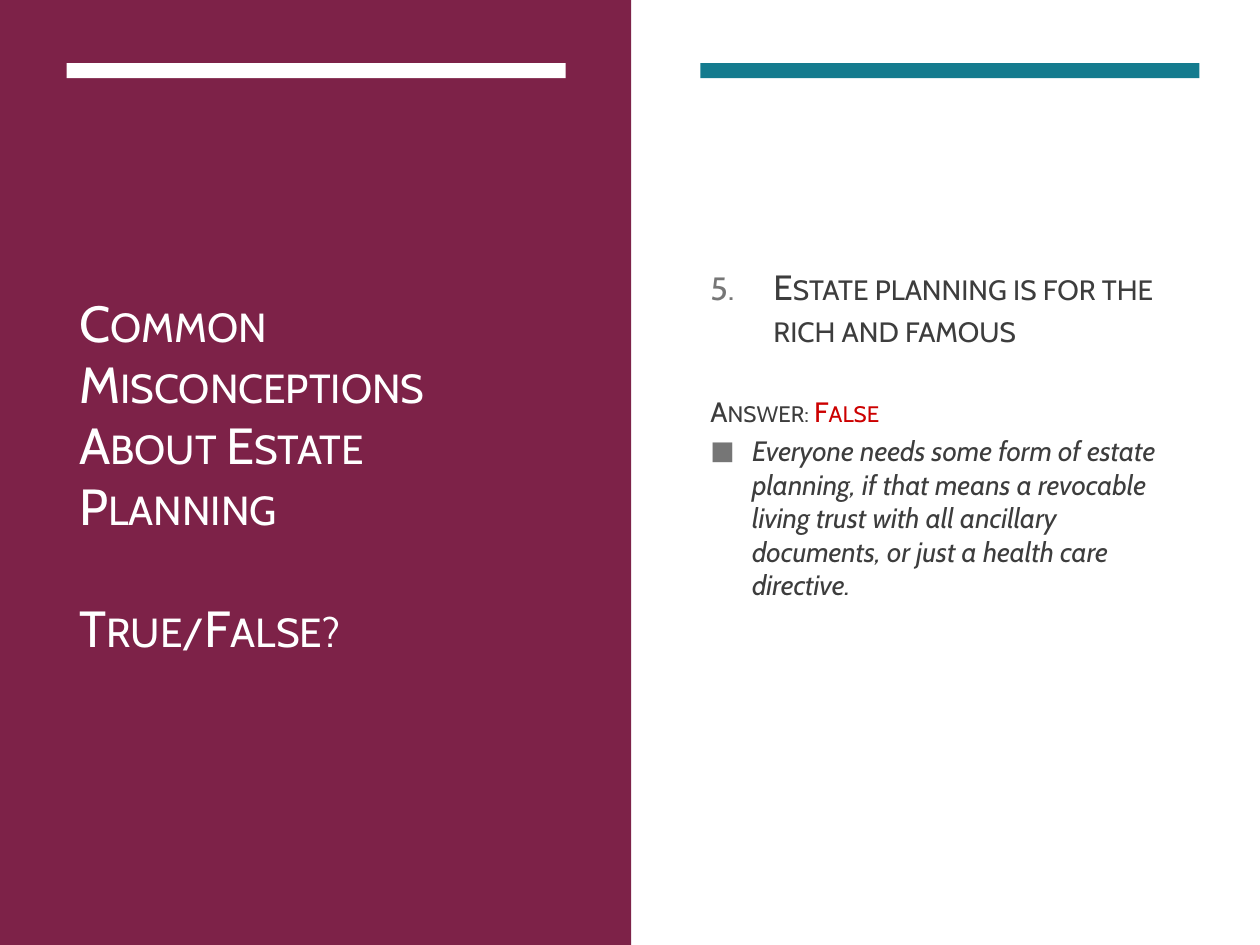
from lxml.etree import SubElement
from pptx import Presentation
from pptx.dml.color import RGBColor
from pptx.enum.shapes import MSO_SHAPE
from pptx.enum.text import MSO_ANCHOR, MSO_AUTO_SIZE, PP_ALIGN
from pptx.oxml.ns import qn
from pptx.util import Inches, Pt

WHITE = RGBColor(0xFF, 0xFF, 0xFF)
PLUM = RGBColor(0x7D, 0x22, 0x48)
TEAL = RGBColor(0x14, 0x7B, 0x8E)
INK = RGBColor(0x3D, 0x3D, 0x3D)
RED = RGBColor(0xCC, 0x00, 0x00)
MARKER_GREY = RGBColor(0x76, 0x76, 0x76)
FONT = "Cabin"


def add_block(slide, left, top, width, height, color):
    """Add a plain filled rectangle."""
    shape = slide.shapes.add_shape(
        MSO_SHAPE.RECTANGLE, Inches(left), Inches(top), Inches(width), Inches(height)
    )
    shape.shadow.inherit = False
    shape.fill.solid()
    shape.fill.fore_color.rgb = color
    shape.line.fill.background()
    return shape


def format_run(run, size, color, small_caps=True, italic=False):
    """Apply the slide's font to a run."""
    run.font.name = FONT
    run.font.size = Pt(size)
    run.font.color.rgb = color
    run.font.italic = italic
    if small_caps:
        run.font._element.set("cap", "small")


def set_marker(paragraph, indent, tag, **attributes):
    """Give a paragraph a hanging indent and a grey bullet or number."""
    properties = paragraph._p.get_or_add_pPr()
    properties.set("marL", str(Inches(indent)))
    properties.set("indent", str(-Inches(indent)))
    color = SubElement(properties, qn("a:buClr"))
    SubElement(color, qn("a:srgbClr"), val=str(MARKER_GREY))
    SubElement(properties, qn("a:buSzPct"), val="92000")
    SubElement(properties, qn("a:buFont"), typeface=FONT)
    SubElement(properties, qn(tag), **attributes)


def add_title_panel(slide, left, top, width, height):
    """Place the coloured panel with its bar and the slide title."""
    title = slide.shapes.title
    panel = add_block(slide, left, top, width, height, PLUM)
    title._element.addprevious(panel._element)
    add_block(slide, left + 0.53, top + 0.5, 3.96, 0.12, WHITE)
    title.left, title.top = Inches(left + 0.53), Inches(top + 1.13)
    title.width, title.height = Inches(3.96), Inches(5.28)
    frame = title.text_frame
    frame.text = "Common Misconceptions About Estate Planning\nTrue/False?"
    frame.word_wrap = True
    frame.auto_size = MSO_AUTO_SIZE.NONE
    frame.vertical_anchor = MSO_ANCHOR.MIDDLE
    for paragraph in frame.paragraphs:
        paragraph.alignment = PP_ALIGN.LEFT
        format_run(paragraph.runs[0], 29, WHITE)
    frame.paragraphs[1].space_before = Pt(35)


def add_answer_panel(slide, left, top):
    """Place the bar, the numbered statement, its answer and the reason."""
    add_block(slide, left + 0.02, top + 0.5, 3.96, 0.12, TEAL)
    box = slide.shapes.add_textbox(
        Inches(left), Inches(top + 1.13), Inches(3.98), Inches(5.28)
    )
    frame = box.text_frame
    frame.word_wrap = True
    frame.vertical_anchor = MSO_ANCHOR.MIDDLE
    frame.margin_bottom = Inches(0.71)

    frame.text = "Estate planning is for the rich and famous"
    statement = frame.paragraphs[0]
    statement.space_before = Pt(4)
    set_marker(statement, 0.5, "a:buAutoNum", type="arabicPeriod", startAt="5")
    format_run(statement.runs[0], 20, INK)

    answer = frame.add_paragraph()
    answer.space_before = Pt(25.6)
    for text, color in (("Answer: ", INK), ("False", RED)):
        run = answer.add_run()
        run.text = text
        format_run(run, 16, color)

    reason = frame.add_paragraph()
    reason.text = (
        "Everyone needs some form of estate planning, if that means a revocable "
        "living trust with all ancillary documents, or just a health care directive."
    )
    reason.space_before = Pt(3.2)
    set_marker(reason, 0.33, "a:buChar", char="■")
    format_run(reason.runs[0], 16, INK, small_caps=False, italic=True)


def main():
    """Build and save the slide."""
    presentation = Presentation()
    presentation.slide_width = Inches(10)
    presentation.slide_height = Inches(7.5)
    slide = presentation.slides.add_slide(presentation.slide_layouts[5])
    slide.background.fill.solid()
    slide.background.fill.fore_color.rgb = WHITE
    add_title_panel(slide, 0, 0, 5.01, 7.5)
    add_answer_panel(slide, 5.54, 0)
    presentation.save("out.pptx")


if __name__ == "__main__":
    main()
